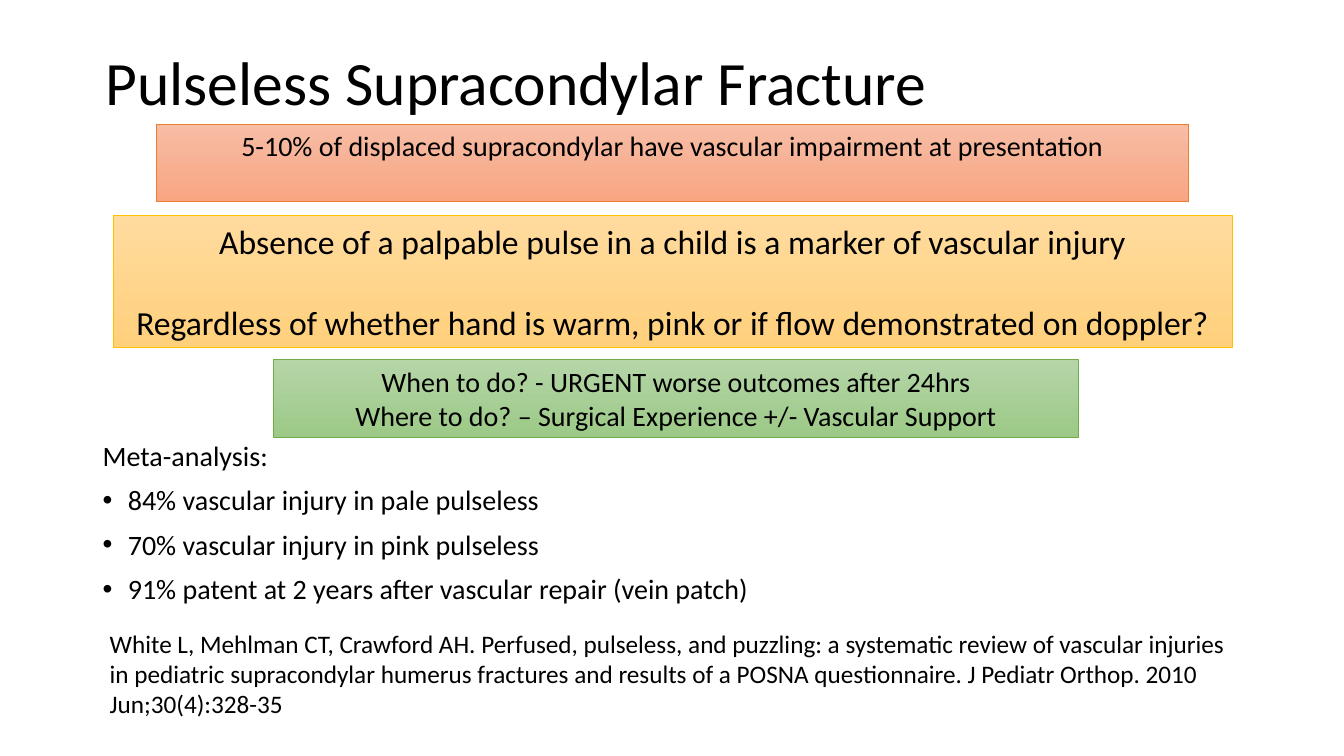
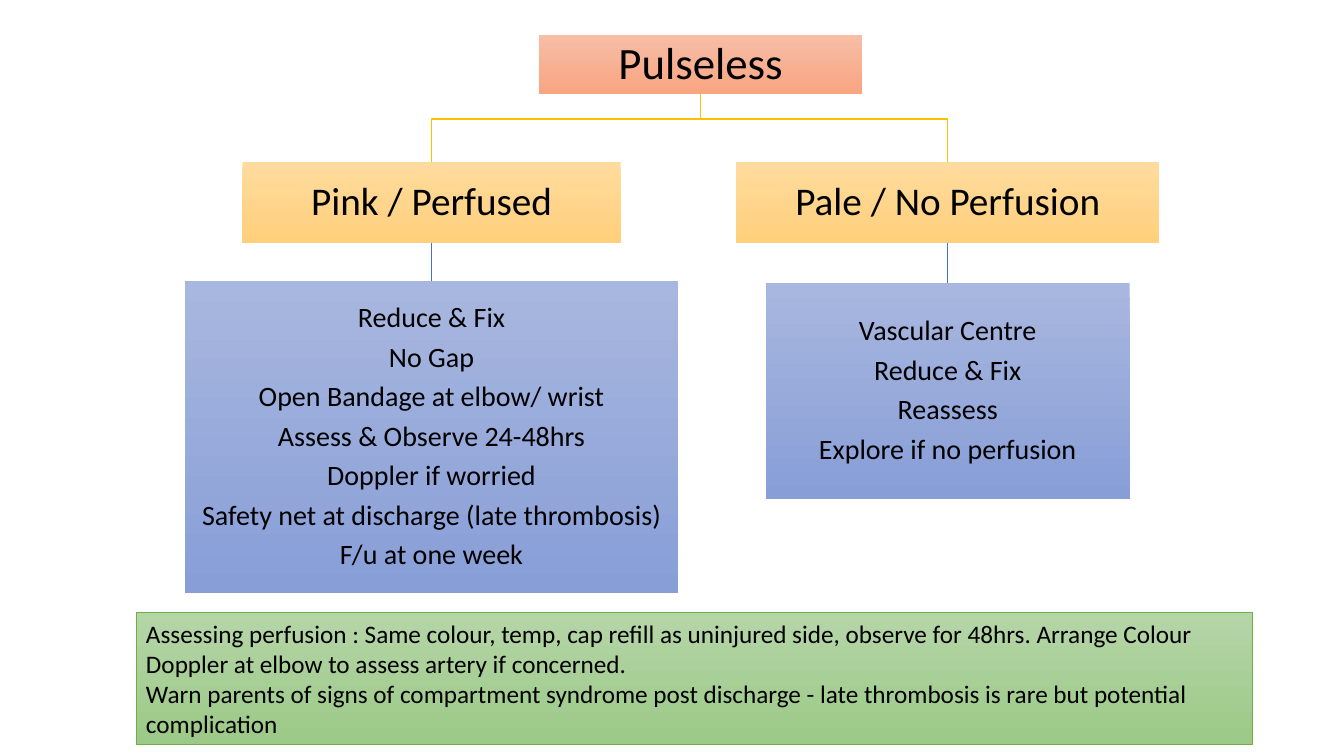
from dataclasses import dataclass

from lxml.etree import SubElement
from pptx import Presentation
from pptx.dml.color import RGBColor
from pptx.enum.shapes import MSO_CONNECTOR, MSO_SHAPE
from pptx.enum.text import MSO_ANCHOR, PP_ALIGN
from pptx.oxml.ns import qn
from pptx.util import Inches, Pt


@dataclass(frozen=True)
class Tone:
    top: str
    bottom: str
    line: str


@dataclass(frozen=True)
class Theme:
    font: str = "Calibri"
    ink: str = "000000"
    red: Tone = Tone("F7BDA5", "F8A582", "ED7D31")
    amber: Tone = Tone("FFDB9E", "FFD07C", "FFC000")
    green: Tone = Tone("B5D5A7", "9CC987", "70AD47")
    blue: Tone = Tone("A8B7DF", "889ED7", "4472C4")
    title: int = 44
    root: int = 32
    branch: int = 28
    lead: int = 24
    body: int = 20
    note: int = 18
    outline: float = 0.5
    link: float = 1


THEME = Theme()


def rgb(value):
    return RGBColor.from_string(value)


def add_bullet(para, indent=0.25):
    props = para._p.get_or_add_pPr()
    props.set("marL", str(Inches(indent)))
    props.set("indent", str(-Inches(indent)))
    SubElement(props, qn("a:buFont")).set("typeface", "Arial")
    SubElement(props, qn("a:buChar")).set("char", "•")


def write(shape, lines, size=THEME.body, align=PP_ALIGN.LEFT, anchor=MSO_ANCHOR.TOP,
          inset=None, spacing=1.0, gap=0, bullets_from=None):
    """Fill a shape with paragraphs; gap is the space in points between them."""
    frame = shape.text_frame
    frame.word_wrap = True
    frame.vertical_anchor = anchor
    if inset is not None:
        frame.margin_left = frame.margin_right = Inches(inset)
        frame.margin_top = frame.margin_bottom = Inches(inset)
    for index, line in enumerate(lines):
        para = frame.add_paragraph() if index else frame.paragraphs[0]
        if bullets_from is not None and index >= bullets_from:
            add_bullet(para)
        para.alignment = align
        para.line_spacing = spacing
        if index and gap:
            para.space_before = Pt(gap)
        span = para.add_run()
        span.text = line
        span.font.name = THEME.font
        span.font.size = Pt(size)
        span.font.color.rgb = rgb(THEME.ink)


def add_text(page, box, lines, **style):
    write(page.shapes.add_textbox(*map(Inches, box)), lines, **style)


def add_panel(page, box, tone, lines, outlined=True, **style):
    panel = page.shapes.add_shape(MSO_SHAPE.RECTANGLE, *map(Inches, box))
    panel.shadow.inherit = False
    panel.fill.gradient()
    panel.fill.gradient_angle = 270
    for stop, color, position in zip(panel.fill.gradient_stops, (tone.top, tone.bottom), (0, 1)):
        stop.color.rgb = rgb(color)
        stop.position = position
    if outlined:
        panel.line.color.rgb = rgb(tone.line)
        panel.line.width = Pt(THEME.outline)
    else:
        panel.line.fill.background()
    write(panel, lines, **style)
    return panel


def add_node(page, axis, top, width, height, tone, lines, **style):
    """Add a chart box centred on a vertical axis."""
    return add_panel(page, (axis - width / 2, top, width, height), tone, lines,
                     outlined=False, align=PP_ALIGN.CENTER, anchor=MSO_ANCHOR.MIDDLE,
                     inset=0.02, spacing=0.9, gap=6.6, **style)


def set_link_line(link, tone):
    link.line.color.rgb = rgb(tone.line)
    link.line.width = Pt(THEME.link)


def join_by_elbow(page, parent, child, drop=0.25):
    start_x = parent.left + parent.width // 2
    start_y = parent.top + parent.height
    end_x = child.left + child.width // 2
    bend_y = start_y + Inches(drop)
    builder = page.shapes.build_freeform(start_x, start_y)
    builder.add_line_segments([(start_x, bend_y), (end_x, bend_y), (end_x, child.top)],
                              close=False)
    elbow = builder.convert_to_shape()
    elbow.shadow.inherit = False
    elbow.fill.background()
    set_link_line(elbow, THEME.amber)


def join_straight(page, parent, child):
    link = page.shapes.add_connector(MSO_CONNECTOR.STRAIGHT, 0, 0, 0, 0)
    link.begin_connect(parent, 2)
    link.end_connect(child, 0)
    SubElement(link._element.spPr, qn("a:effectLst"))
    set_link_line(link, THEME.blue)


def add_branch(page, root, axis, heading, heading_width, steps, steps_box):
    top, width, height = steps_box
    branch = add_node(page, axis, 1.61, heading_width, 0.8, THEME.amber, [heading],
                      size=THEME.branch)
    detail = add_node(page, axis, top, width, height, THEME.blue, steps)
    join_by_elbow(page, root, branch)
    join_straight(page, branch, detail)


def build_evidence(page):
    add_text(page, (0.95, 0.12, 11.5, 1.45), ["Pulseless Supracondylar Fracture"],
             size=THEME.title, anchor=MSO_ANCHOR.MIDDLE, spacing=0.9)
    add_text(page, (0.92, 4.34, 11.5, 1.83), [
        "Meta-analysis:",
        "84% vascular injury in pale pulseless",
        "70% vascular injury in pink pulseless",
        "91% patent at 2 years after vascular repair (vein patch)",
    ], spacing=0.9, gap=10, bullets_from=1)
    add_panel(page, (1.55, 1.23, 10.24, 0.77), THEME.red, [
        "5-10% of displaced supracondylar have vascular impairment at presentation",
    ], align=PP_ALIGN.CENTER)
    add_panel(page, (1.12, 2.14, 11.1, 1.31), THEME.amber, [
        "Absence of a palpable pulse in a child is a marker of vascular injury",
        "Regardless of whether hand is warm, pink or if flow demonstrated on doppler?",
    ], size=THEME.lead, align=PP_ALIGN.CENTER, gap=29)
    add_panel(page, (2.71, 3.57, 7.99, 0.77), THEME.green, [
        "When to do? - URGENT worse outcomes after 24hrs",
        "Where to do? – Surgical Experience +/- Vascular Support",
    ], align=PP_ALIGN.CENTER)
    add_text(page, (0.99, 6.18, 11.46, 1.01), [
        "White L, Mehlman CT, Crawford AH. Perfused, pulseless, and puzzling: a systematic "
        "review of vascular injuries in pediatric supracondylar humerus fractures and results "
        "of a POSNA questionnaire. J Pediatr Orthop. 2010 Jun;30(4):328-35",
    ], size=THEME.note)


def build_pathway(page):
    root = add_node(page, 6.95, 0.35, 3.21, 0.58, THEME.red, ["Pulseless"], size=THEME.root)
    add_branch(page, root, 4.28, "Pink / Perfused", 3.75, [
        "Reduce & Fix",
        "No Gap",
        "Open Bandage at elbow/ wrist",
        "Assess & Observe 24-48hrs",
        "Doppler if worried",
        "Safety net at discharge (late thrombosis)",
        "F/u at one week",
    ], (2.79, 4.89, 3.09))
    add_branch(page, root, 9.4, "Pale / No Perfusion", 4.2, [
        "Vascular Centre",
        "Reduce & Fix",
        "Reassess",
        "Explore if no perfusion",
    ], (2.81, 3.61, 2.14))
    add_panel(page, (1.35, 6.08, 11.07, 1.31), THEME.green, [
        "Assessing perfusion : Same colour, temp, cap refill as uninjured side, observe for "
        "48hrs. Arrange Colour Doppler at elbow to assess artery if concerned.",
        "Warn parents of signs of compartment syndrome post discharge - late thrombosis is "
        "rare but potential complication",
    ], size=THEME.note)


def main():
    deck = Presentation()
    deck.slide_width = Inches(13.33)
    deck.slide_height = Inches(7.5)
    for build in (build_evidence, build_pathway):
        build(deck.slides.add_slide(deck.slide_layouts[6]))
    deck.save("out.pptx")


if __name__ == "__main__":
    main()
